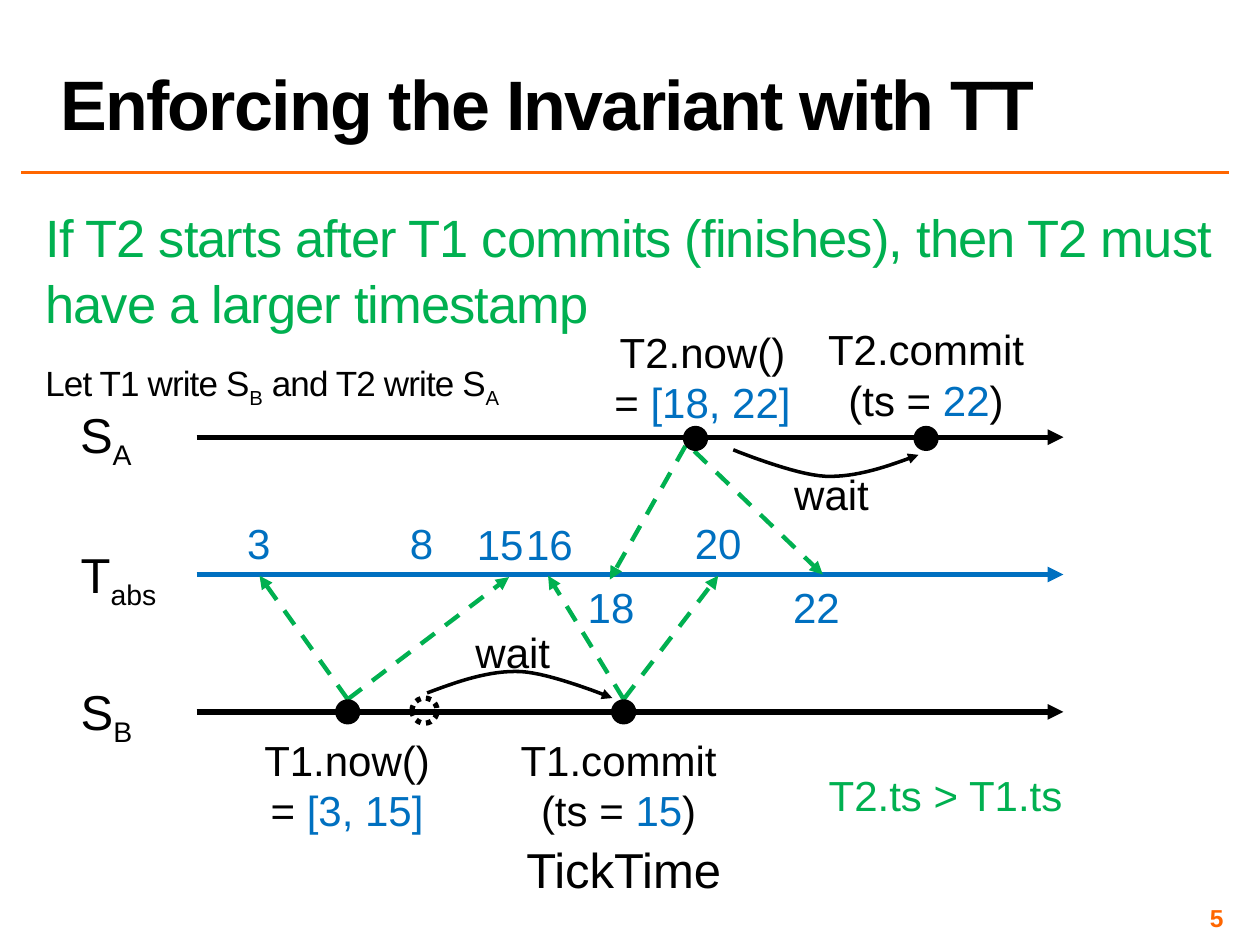
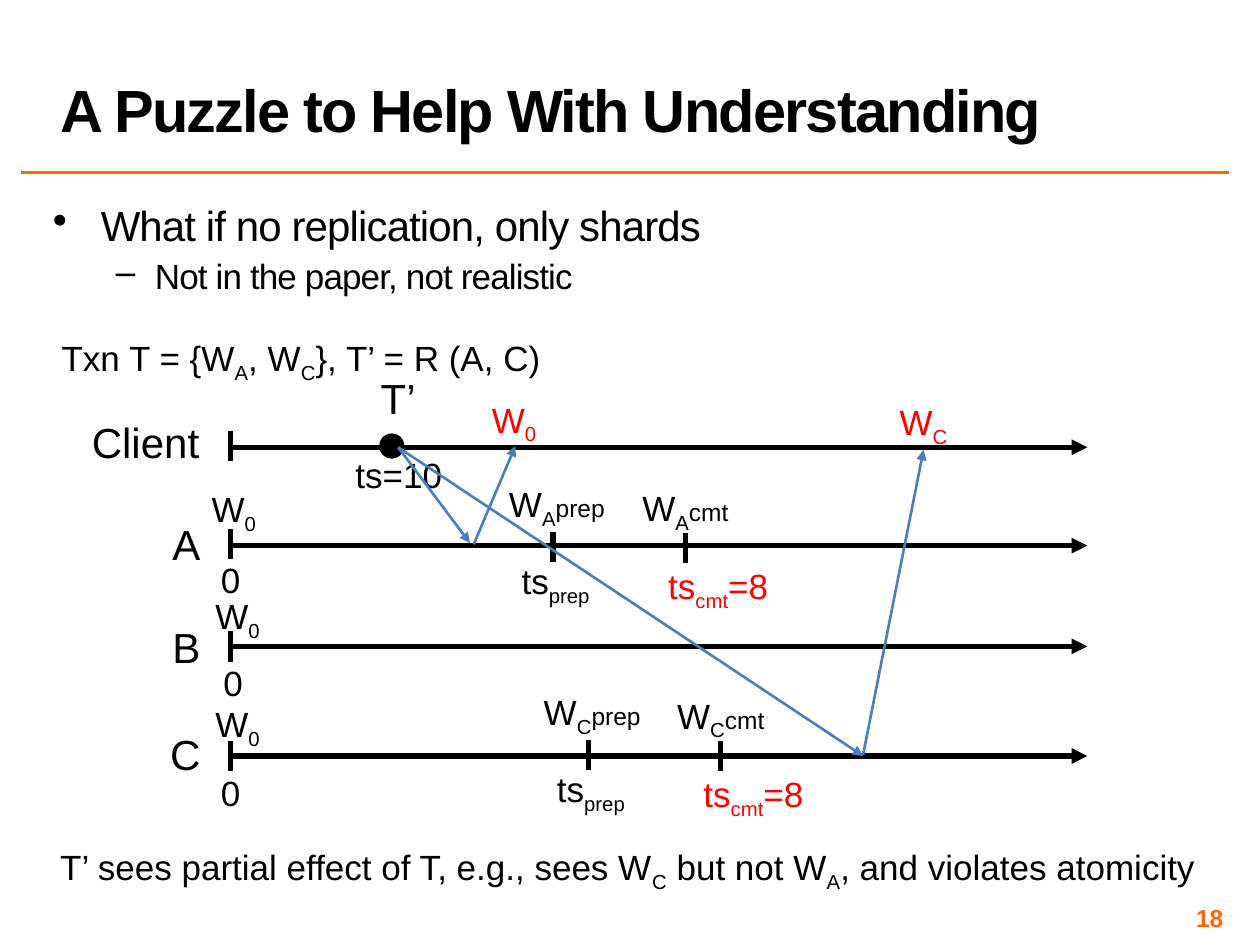
import pptx
import pptx.util
import pptx.dml.color
import pptx.enum.dml
import pptx.enum.shapes
import pptx.enum.text
import pptx.oxml.ns
import lxml.etree

PX = 9144  # EMU per px, 100 px to the inch
FONT = "Arial"

RGB = pptx.dml.color.RGBColor
BLACK = RGB(0x00, 0x00, 0x00)
ORANGE = RGB(0xFF, 0x66, 0x00)
BLUE = RGB(0x00, 0x70, 0xC0)
GREEN = RGB(0x00, 0xB0, 0x50)
RED = RGB(0xFF, 0x00, 0x00)
STEEL = RGB(0x4B, 0x7E, 0xBC)

ALIGN = pptx.enum.text.PP_ALIGN
ANCHOR = pptx.enum.text.MSO_ANCHOR
FIT = pptx.enum.text.MSO_AUTO_SIZE
DASH = pptx.enum.dml.MSO_LINE


def px(*values):
    return [pptx.util.Emu(round(v * PX)) for v in values]


# Text: a paragraph is a list of pieces, each a string or (string, changes)

def sub(text):
    return text, {"baseline": -25000}


def tint(text, color):
    return text, {"color": color}


def small(text):
    return text, {"size": 14}


def format_run(r, size, color=BLACK, bold=False, spacing=0, baseline=0):
    r.font.name = FONT
    r.font.size = pptx.util.Pt(size)
    r.font.bold = bold
    r.font.color.rgb = color
    rPr = r.font._element
    if spacing:
        rPr.set("spc", str(spacing))
    if baseline:
        rPr.set("baseline", str(baseline))


def fill_paragraph(p, pieces, align, **style):
    p.alignment = align
    for piece in pieces:
        text, changes = (piece, {}) if isinstance(piece, str) else piece
        r = p.add_run()
        r.text = text
        format_run(r, **{**style, **changes})


def add_label(s, left, top, width, *paragraphs, size=24, align=ALIGN.CENTER, color=BLACK):
    height = 10 + len(paragraphs) * size * 5 / 3
    sp = s.shapes.add_textbox(*px(left, top, width, height))
    tf = sp.text_frame
    tf.word_wrap = False
    tf.auto_size = FIT.SHAPE_TO_FIT_TEXT
    for i, pieces in enumerate(paragraphs):
        p = tf.add_paragraph() if i else tf.paragraphs[0]
        fill_paragraph(p, pieces, align, size=size, color=color)


def add_frame(s, left, top, width, height):
    tf = s.shapes.add_textbox(*px(left, top, width, height)).text_frame
    tf.word_wrap = True
    tf.margin_left, tf.margin_top, tf.margin_right, tf.margin_bottom = px(4, 4, 4, 4)
    return tf


def set_bullet(p, char, left, hang):
    pPr = p._p.get_or_add_pPr()
    pPr.set("marL", str(left * PX))
    pPr.set("indent", str(-hang * PX))
    bullet = lxml.etree.SubElement(pPr, pptx.oxml.ns.qn("a:buChar"))
    bullet.set("char", char)


# Lines and dots

def add_arrowhead(sp, end="tailEnd"):
    ln = sp._element.spPr.find(pptx.oxml.ns.qn("a:ln"))
    lxml.etree.SubElement(ln, pptx.oxml.ns.qn("a:" + end)).set("type", "triangle")


def add_line(s, start, end, color=BLACK, width=3, dash=None, arrow=False):
    straight = pptx.enum.shapes.MSO_CONNECTOR.STRAIGHT
    sp = s.shapes.add_connector(straight, *px(*start, *end))
    sp.line.color.rgb = color
    sp.line.width = pptx.util.Pt(width)
    if dash:
        sp.line.dash_style = dash
    if arrow:
        add_arrowhead(sp)
    lxml.etree.SubElement(sp._element.spPr, pptx.oxml.ns.qn("a:effectLst"))


def add_timeline(s, left, right, y, color=BLACK):
    add_line(s, (left, y), (right, y), color, arrow=True)


def add_tick(s, x, y):
    add_line(s, (x, y - 12), (x, y + 12))


def add_dot(s, left, top, hollow=False):
    oval = pptx.enum.shapes.MSO_SHAPE.OVAL
    sp = s.shapes.add_shape(oval, *px(left, top, 20, 20))
    sp.shadow.inherit = False
    if hollow:
        sp.fill.background()
        sp.line.color.rgb = BLACK
        sp.line.width = pptx.util.Pt(3)
        sp.line.dash_style = DASH.ROUND_DOT
    else:
        sp.fill.solid()
        sp.fill.fore_color.rgb = BLACK
        sp.line.fill.background()


def bezier(points, steps=16):
    a, b, c, d = points
    for i in range(1, steps + 1):
        t = i / steps
        u = 1 - t
        yield tuple(u**3 * a[k] + 3 * u * u * t * b[k] + 3 * u * t * t * c[k] + t**3 * d[k]
                    for k in (0, 1))


def add_wait_curve(s, points, arrow_end):
    curve = [points[0], *bezier(points[:4]), *bezier(points[3:])]
    curve = [px(*point) for point in curve]
    builder = s.shapes.build_freeform(*curve[0])
    builder.add_line_segments(curve[1:], close=False)
    sp = builder.convert_to_shape()
    sp.shadow.inherit = False
    sp.fill.background()
    sp.line.color.rgb = BLACK
    sp.line.width = pptx.util.Pt(2)
    add_arrowhead(sp, arrow_end)


# Shared slide parts

def new_slide(prs, title, title_size, number):
    s = prs.slides.add_slide(prs.slide_layouts[5])
    add_line(s, (17, 137), (975, 137), ORANGE, 2)

    sp = s.shapes.title
    sp.left, sp.top, sp.width, sp.height = px(38, 2, 937, 117)
    tf = sp.text_frame
    tf.text = title
    tf.word_wrap = True
    tf.auto_size = FIT.NONE
    tf.vertical_anchor = ANCHOR.BOTTOM
    p = tf.paragraphs[0]
    p.alignment = ALIGN.LEFT
    p.line_spacing = 0.8
    format_run(p.runs[0], title_size, bold=True, spacing=-100)

    tf = add_frame(s, 742, 717, 233, 23)
    tf.vertical_anchor = ANCHOR.MIDDLE
    fill_paragraph(tf.paragraphs[0], [str(number)], ALIGN.RIGHT,
                   size=14, color=ORANGE, bold=True)
    return s


def build_invariant(prs):
    s = new_slide(prs, "Enforcing the Invariant with TT", 40, 5)

    # Invariant
    tf = add_frame(s, 32, 156, 940, 150)
    p = tf.paragraphs[0]
    fill_paragraph(p, ["If T2 starts after T1 commits (finishes), then T2 must "
                       "have a larger timestamp"],
                   ALIGN.LEFT, size=30, color=GREEN, spacing=-50)
    p.line_spacing = 1.05
    p.space_after = pptx.util.Pt(8)
    p = tf.add_paragraph()
    fill_paragraph(p, ["Let T1 write S", sub("B"), " and T2 write S", sub("A")],
                   ALIGN.LEFT, size=20, spacing=-50)
    p.space_before = pptx.util.Pt(8)

    # Timelines
    for y, color in (347, BLACK), (456, BLUE), (565, BLACK):
        add_timeline(s, 156, 844, y, color)
    for left, top, width, name, index in ((52, 316, 64, "S", "A"),
                                          (53, 427, 82, "T", "abs"),
                                          (53, 536, 63, "S", "B")):
        add_label(s, left, top, width, [name, sub(index)], size=28)
    add_label(s, 402, 661, 186, ["TickTime"], size=28)

    # Uncertainty intervals, from each event to the absolute clock
    for event, clock in (((276, 555), (206, 457)), ((276, 555), (404, 458)),
                         ((495, 555), (435, 457)), ((495, 555), (570, 457)),
                         ((544, 354), (484, 460)), ((551, 358), (653, 456))):
        add_line(s, event, clock, GREEN, 2.5, DASH.DASH, arrow=True)

    # Events
    for left, top in (266, 555), (485, 555), (542, 338), (725, 338):
        add_dot(s, left, top)
    add_dot(s, 327, 554, hollow=True)
    for left, top, width, call, interval in ((199, 578, 153, "T1.now()", "[3, 15]"),
                                             (477, 254, 161, "T2.now()", "[18, 22]")):
        add_label(s, left, top, width, [call], ["= ", tint(interval, BLUE)])
    for left, top, call, ts in (401, 578, "T1.commit", "15"), (645, 252, "T2.commit", "22"):
        add_label(s, left, top, 180, [call], ["(ts = ", tint(ts, BLUE), ")"])

    # Clock readings
    for left, top, reading in ((186, 406, "3"), (315, 406, "8"), (368, 407, "15"),
                               (407, 407, "16"), (541, 406, "20"),
                               (456, 457, "18"), (619, 457, "22")):
        add_label(s, left, top, 19 * len(reading) + 20, [reading], color=BLUE)

    # Commit waits: the upper curve is the lower one turned by 180 degrees
    wait = [(339, 550), (363, 541), (388, 532), (413, 533), (437, 534), (486, 554), (486, 554)]
    add_wait_curve(s, wait, "tailEnd")
    add_wait_curve(s, [(1068 - x, 911 - y) for x, y in reversed(wait)][::-1], "headEnd")
    for left, top in (367, 492), (620, 367):
        add_label(s, left, top, 80, ["wait"])
    add_label(s, 647, 606, 207, ["T2.ts > T1.ts"], color=GREEN)


def add_write(s, x, y, shard, phase, ts, rise, drop, shift, color):
    """Tick with the write above it and its timestamp below."""
    add_tick(s, x, y)
    add_label(s, x - 49, y - rise, 104 if phase == "prep" else 98,
              ["W", sub(shard), small(phase)], size=20)
    add_label(s, x + shift - 52, y + drop, 104, ts, size=20, color=color)


def build_puzzle(prs):
    s = new_slide(prs, "A Puzzle to Help With Understanding", 34, 18)

    # Bullets
    tf = add_frame(s, 38, 159, 937, 90)
    bullets = (("What if no replication, only shards", 24, "•", 38, 38, 0),
               ("Not in the paper, not realistic", 20, "–", 81, 31, 5))
    for level, (text, size, char, left, hang, before) in enumerate(bullets):
        p = tf.add_paragraph() if level else tf.paragraphs[0]
        fill_paragraph(p, [text], ALIGN.JUSTIFY, size=size, spacing=-50)
        p.level = level
        p.line_spacing = 0.9
        p.space_before = pptx.util.Pt(before)
        set_bullet(p, char, left, hang)
    add_label(s, 31, 262, 416, ["Txn T = {W", sub("A"), ", W", sub("C"), "}, T’ = R (A, C)"],
              size=20)

    # Client and shard timelines
    for name, y, left, top, width in (("Client", 355, 62, 326, 106), ("A", 433, 126, 407, 43),
                                      ("B", 513, 126, 488, 43), ("C", 600, 124, 573, 45)):
        add_timeline(s, 182, 863, y)
        add_tick(s, 183, y - 1 if y < 500 else y)
        add_label(s, left, top, width, [name], align=ALIGN.RIGHT)
    for write_left, write_top, zero_left, zero_top in ((156, 382, 165, 438),
                                                       (159, 467, 167, 520),
                                                       (159, 553, 165, 607)):
        add_label(s, write_left, write_top, 59, ["W", sub("0")], size=20)
        add_label(s, zero_left, zero_top, 36, ["0"], size=20)

    # Prepare and commit on shards A and C
    for shard, x, y in ("A", 439, 434), ("C", 467, 599):
        add_write(s, x, y, shard, "prep", ["ts", sub("prep")], 56, 5, 2, BLACK)
        add_write(s, x + 105, y + 1, shard, "cmt", ["ts", sub("cmt"), "=8"], 54, 8, 26, RED)

    # Read transaction
    add_label(s, 291, 291, 50, ["T’"])
    add_dot(s, 301, 344)
    add_label(s, 270, 355, 93, ["ts=10"], size=20)
    for start, end in (((316, 355), (373, 431)), ((316, 355), (685, 600)),
                       ((376, 432), (409, 354)), ((685, 599), (733, 357))):
        add_line(s, start, end, STEEL, 1.5, arrow=True)
    for left, top, version in (375, 311, "0"), (700, 313, "C"):
        add_label(s, left, top, 66, ["W", sub(version)], size=20, color=RED)

    # Conclusion
    add_label(s, 38, 666, 937,
              ["T’ sees partial effect of T, e.g., sees W", sub("C"), " but not W", sub("A"),
               ", and violates atomicity"], size=20, align=ALIGN.LEFT)


def main():
    prs = pptx.Presentation()
    prs.slide_width, prs.slide_height = px(1000, 750)
    build_invariant(prs)
    build_puzzle(prs)
    prs.save("out.pptx")


if __name__ == "__main__":
    main()
